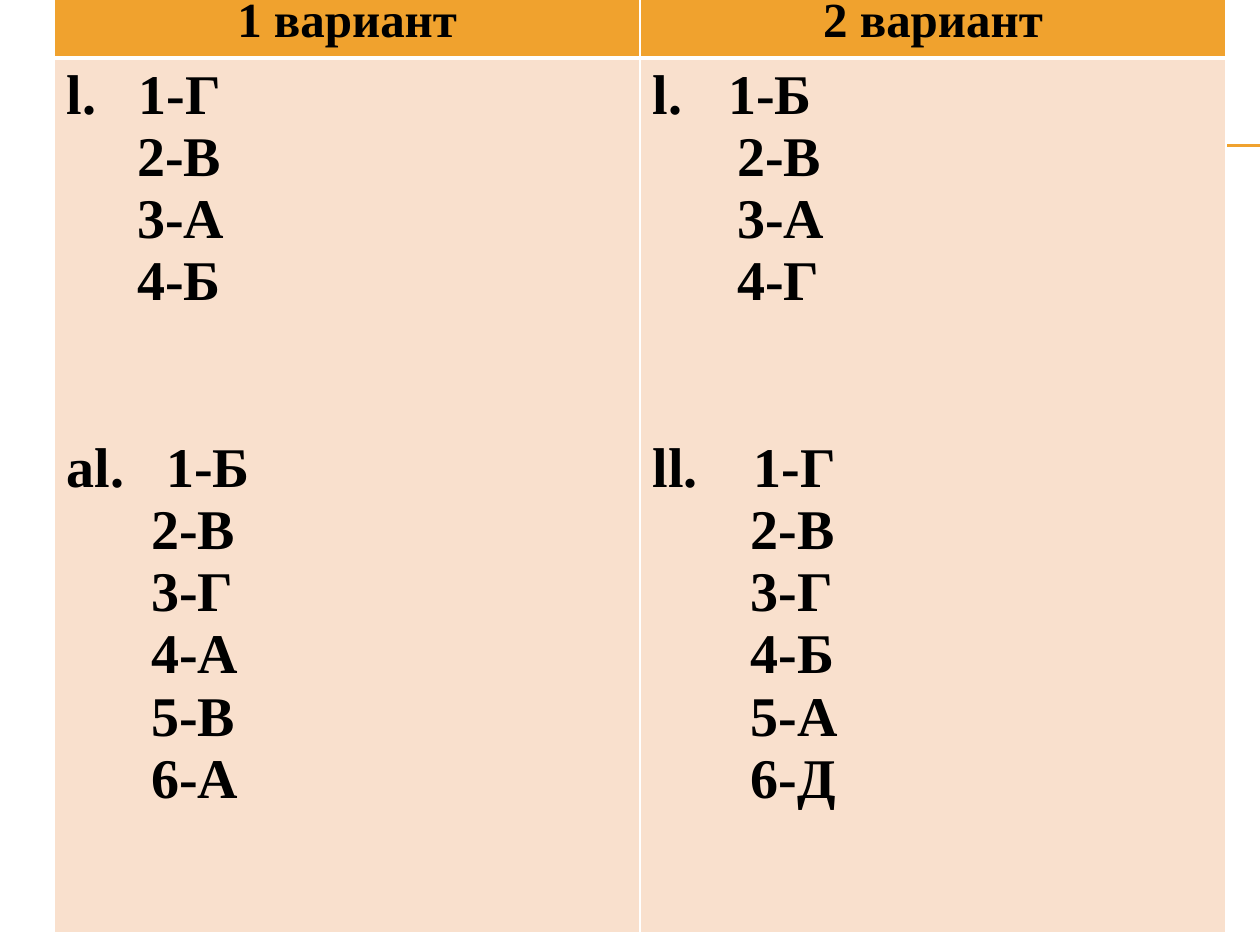
"""Build a slide with the answer key for two test variants."""
from lxml import etree
from pptx import Presentation
from pptx.dml.color import RGBColor
from pptx.enum.shapes import MSO_CONNECTOR
from pptx.enum.text import PP_ALIGN
from pptx.oxml.ns import qn
from pptx.util import Inches, Pt

STRAIGHT = MSO_CONNECTOR.STRAIGHT
LEFT, CENTER = PP_ALIGN.LEFT, PP_ALIGN.CENTER

COLORS = {"accent": "F0A22E", "body": "F9E0CD", "border": "FFFFFF", "text": "000000"}
FONT = "Times New Roman"
HEADER_SIZE, ANSWER_SIZE = 28, 32
SECTION_GAP = 71

VARIANTS = [
    {"title": "1 вариант", "sections": [
        {"label": "l.", "first_indent": 0.57, "indent": 0.56,
         "answers": ["1-Г", "2-В", "3-А", "4-Б"]},
        {"label": "al.", "first_indent": 0.79, "indent": 0.67,
         "answers": ["1-Б", "2-В", "3-Г", "4-А", "5-В", "6-А"]}]},
    {"title": "2 вариант", "sections": [
        {"label": "l.", "first_indent": 0.6, "indent": 0.67,
         "answers": ["1-Б", "2-В", "3-А", "4-Г"]},
        {"label": "ll.", "first_indent": 0.8, "indent": 0.78,
         "answers": ["1-Г", "2-В", "3-Г", "4-Б", "5-А", "6-Д"]}]},
]
TABLE_LEFT, TABLE_TOP = 0.43, -0.1
COLUMN_WIDTH = 4.65
ROW_HEIGHTS = [0.56, 6.94]
RULE_LEFT, RULE_RIGHT = 0.56, 10
RULE_TOPS = [1.15, 1.16]


def color(name):
    return RGBColor.from_string(COLORS[name])


def add_rule(slide, top):
    rule = slide.shapes.add_connector(
        STRAIGHT, Inches(RULE_LEFT), Inches(top), Inches(RULE_RIGHT), Inches(top))
    rule.line.color.rgb = color("accent")
    rule.line.width = Pt(0.75)
    etree.SubElement(rule._element.spPr, qn("a:effectLst"))


def style_cell(cell, fill, thick_side):
    properties = cell._tc.get_or_add_tcPr()
    for side in "LRTB":
        width = Pt(3 if side == thick_side else 1)
        line = etree.SubElement(properties, qn(f"a:ln{side}"), w=str(width))
        solid = etree.SubElement(line, qn("a:solidFill"))
        etree.SubElement(solid, qn("a:srgbClr"), val=COLORS["border"])
    cell.fill.solid()
    cell.fill.fore_color.rgb = color(fill)


def write(para, text, size, align):
    para.text = text
    para.alignment = align
    para.font.name = FONT
    para.font.size = Pt(size)
    para.font.bold = True
    para.font.color.rgb = color("text")


def fill_answers(frame, sections):
    para = frame.paragraphs[0]
    for section_index, section in enumerate(sections):
        for index, answer in enumerate(section["answers"]):
            if section_index or index:
                para = frame.add_paragraph()
            first = index == 0
            text = f"{section['label']}\t{answer}" if first else answer
            write(para, text, ANSWER_SIZE, LEFT)
            margin = Inches(section["first_indent" if first else "indent"])
            properties = para._p.get_or_add_pPr()
            properties.set("marL", str(margin))
            properties.set("indent", str(-margin if first else 0))
            if first and section_index:
                para.space_before = Pt(SECTION_GAP)


def add_answer_table(slide):
    table = slide.shapes.add_table(
        len(ROW_HEIGHTS), len(VARIANTS), Inches(TABLE_LEFT), Inches(TABLE_TOP),
        Inches(COLUMN_WIDTH * len(VARIANTS)), Inches(sum(ROW_HEIGHTS))).table
    for row, height in zip(table.rows, ROW_HEIGHTS):
        row.height = Inches(height)
    for index, variant in enumerate(VARIANTS):
        table.columns[index].width = Inches(COLUMN_WIDTH)
        header, body = table.cell(0, index), table.cell(1, index)
        style_cell(header, "accent", "B")
        style_cell(body, "body", "T")
        write(header.text_frame.paragraphs[0], variant["title"], HEADER_SIZE, CENTER)
        fill_answers(body.text_frame, variant["sections"])


def main():
    deck = Presentation()
    deck.slide_width, deck.slide_height = Inches(10), Inches(7.5)
    slide = deck.slides.add_slide(deck.slide_layouts[6])
    for top in RULE_TOPS:
        add_rule(slide, top)
    add_answer_table(slide)
    deck.save("out.pptx")


if __name__ == "__main__":
    main()
